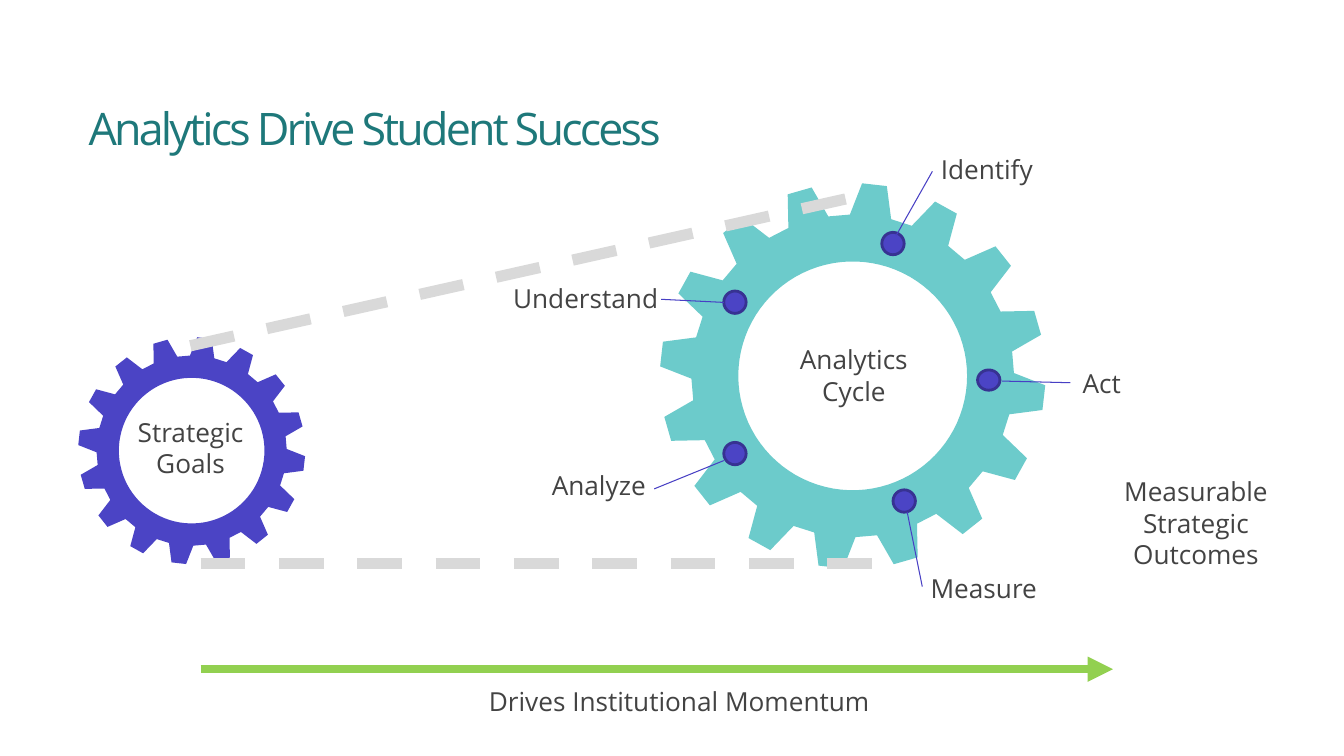
from dataclasses import dataclass
from math import cos, radians, sin

from lxml.etree import SubElement
from pptx import Presentation
from pptx.dml.color import RGBColor
from pptx.enum.dml import MSO_LINE
from pptx.enum.shapes import MSO_CONNECTOR, MSO_SHAPE
from pptx.enum.text import MSO_ANCHOR, PP_ALIGN
from pptx.oxml.ns import qn
from pptx.util import Pt


@dataclass(frozen=True)
class Theme:
    font: str = "Open Sans"
    title_size: float = 32
    body_size: float = 18.7
    title: str = "1E787A"
    text: str = "434343"
    teal: str = "6CCBCB"
    violet: str = "4B44C5"
    dot_edge: str = "373292"
    leader: str = "473FC4"
    belt: str = "D9D9D9"
    momentum: str = "92D050"


def around(center, radius, angles):
    """Points on a circle at the given angles in degrees."""
    x, y = center
    return [(Pt(x + radius * cos(radians(angle))), Pt(y + radius * sin(radians(angle))))
            for angle in angles]


class SlideBuilder:
    def __init__(self, page, theme):
        self.page = page
        self.theme = theme

    def text(self, content, left, top, width, height, size=None, color=None,
             align=PP_ALIGN.CENTER, anchor=MSO_ANCHOR.TOP, spacing=None):
        """Add a text box; each line of content is a paragraph, spacing is in points."""
        box = self.page.shapes.add_textbox(Pt(left), Pt(top), Pt(width), Pt(height))
        frame = box.text_frame
        frame.word_wrap = True
        frame.vertical_anchor = anchor
        for index, line in enumerate(content.split("\n")):
            para = frame.add_paragraph() if index else frame.paragraphs[0]
            para.alignment = align
            span = para.add_run()
            span.text = line
            span.font.name = self.theme.font
            span.font.size = Pt(size or self.theme.body_size)
            span.font.color.rgb = RGBColor.from_string(color or self.theme.text)
            if spacing is not None:
                span.font._element.set("spc", str(spacing * 100))

    def gear(self, center, tip, root, hole, color, teeth=16):
        """Add a toothed ring; the hole runs the other way round so it stays open."""
        pitch = 360 / teeth
        outline = []
        for tooth in range(teeth):
            turn = -tooth * pitch
            outline += around(center, tip, (turn + 10.2, turn + 2.8))
            outline += around(center, root, (turn - 1, turn - 8.7))
        rim = around(center, hole, range(0, 360, 4))
        builder = self.page.shapes.build_freeform(*outline[0])
        builder.add_line_segments(outline[1:], close=True)
        builder.move_to(*rim[0])
        builder.add_line_segments(rim[1:], close=True)
        ring = builder.convert_to_shape()
        ring.shadow.inherit = False
        ring.fill.solid()
        ring.fill.fore_color.rgb = RGBColor.from_string(color)
        ring.line.fill.background()

    def line(self, start, end, color, width, dash=None, arrow=False):
        connector = self.page.shapes.add_connector(
            MSO_CONNECTOR.STRAIGHT, *(Pt(value) for value in (*start, *end)))
        connector.line.color.rgb = RGBColor.from_string(color)
        connector.line.width = Pt(width)
        if dash:
            connector.line.dash_style = dash
        if arrow:
            SubElement(connector.line._get_or_add_ln(), qn("a:tailEnd"), type="triangle")
        SubElement(connector._element.spPr, qn("a:effectLst"))

    def dot(self, center, width=16, height=16):
        x, y = center
        dot = self.page.shapes.add_shape(
            MSO_SHAPE.OVAL, Pt(x - width / 2), Pt(y - height / 2), Pt(width), Pt(height))
        dot.shadow.inherit = False
        dot.fill.solid()
        dot.fill.fore_color.rgb = RGBColor.from_string(self.theme.violet)
        dot.line.color.rgb = RGBColor.from_string(self.theme.dot_edge)
        dot.line.width = Pt(2)


# label, (left, top, width), dot centre, dot height, leader start, leader end
STEPS = [
    ("Identify", (648, 105.8, 113.8), (637.9, 174), 16, (640, 168.5), (666, 122.4)),
    ("Act", (730, 258.5, 113.8), (706.3, 271.5), 14.5, (715.7, 272.2), (764.6, 273.4)),
    ("Measure", (645.8, 405.4, 113.8), (645.9, 357.9), 16, (648, 365.8), (658.8, 419)),
    ("Analyze", (370.8, 331.9, 113.8), (525, 324), 16, (517, 329), (467.3, 349.2)),
    ("Understand", (356.4, 198, 123.8), (525, 215.9), 16, (517, 216), (472.3, 213.8)),
]


def main():
    deck = Presentation()
    deck.slide_width, deck.slide_height = Pt(960), Pt(540)
    theme = Theme()
    slide = SlideBuilder(deck.slides.add_slide(deck.slide_layouts[6]), theme)

    slide.text("Analytics Drive Student Success", 56.2, 46, 800, 90, size=theme.title_size,
               color=theme.title, align=PP_ALIGN.LEFT, anchor=MSO_ANCHOR.MIDDLE, spacing=-2)

    slide.gear((609.1, 268.5), tip=137.7, root=115.2, hole=81.7, color=theme.teal)
    slide.gear((136.9, 321.9), tip=81.1, root=67.9, hole=52, color=theme.violet)
    for start, end in [((136, 247), (609, 141)), ((143.3, 402.5), (623.5, 402.5))]:
        slide.line(start, end, theme.belt, 8, dash=MSO_LINE.DASH)
    slide.line((143.3, 478), (795, 478), theme.momentum, 6, arrow=True)

    slide.text("Strategic\nGoals", 79.2, 293.8, 113.8, 52.6)
    slide.text("Analytics\nCycle", 553, 241.9, 113.8, 52.6)
    slide.text("Measurable\nStrategic\nOutcomes", 792, 336.2, 124.6, 75)
    slide.text("Drives Institutional Momentum", 336.2, 486, 298, 30.2)

    for label, place, center, height, start, end in STEPS:
        slide.text(label, *place, 30.2)
        slide.dot(center, height=height)
        slide.line(start, end, theme.leader, 0.75)

    deck.save("out.pptx")


if __name__ == "__main__":
    main()
